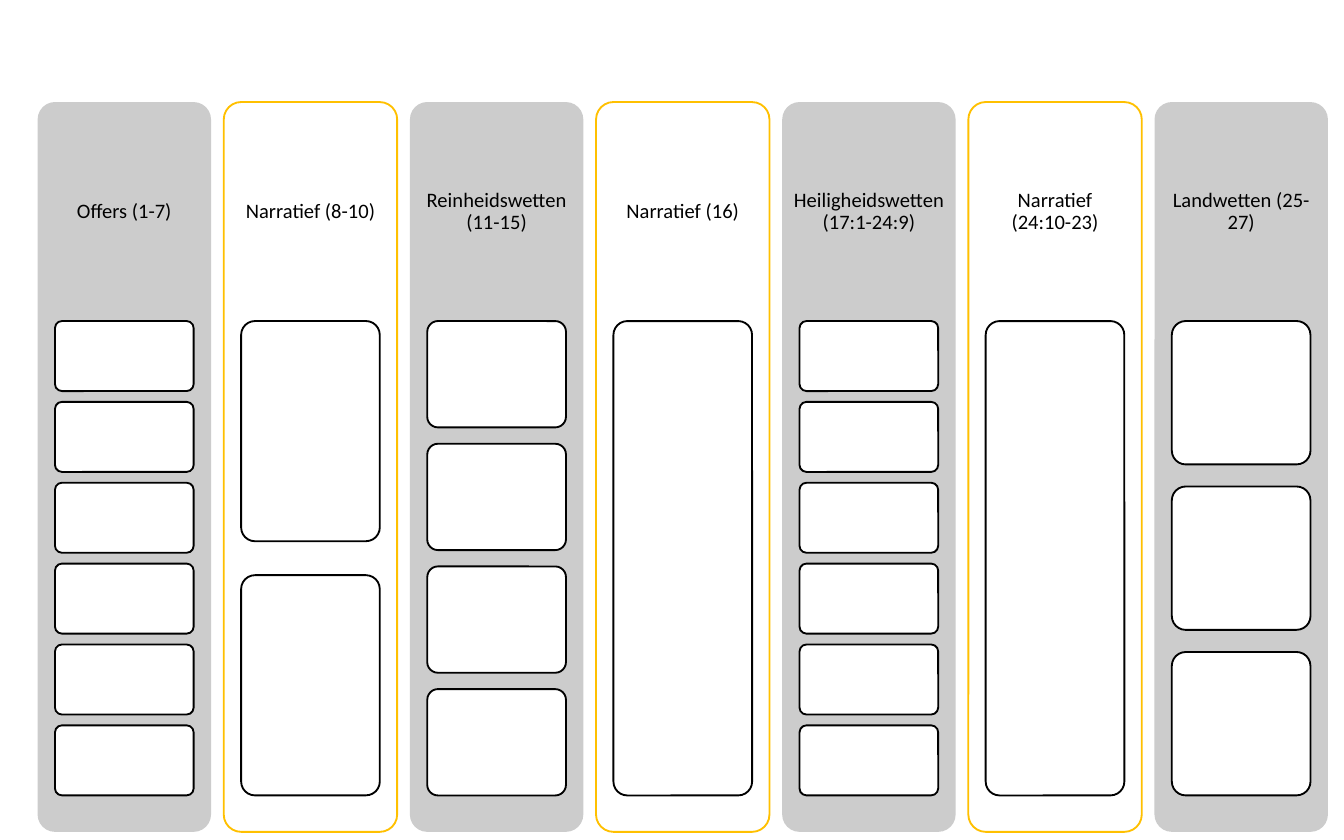
from pptx import Presentation
from pptx.dml.color import RGBColor
from pptx.enum.shapes import MSO_SHAPE
from pptx.enum.text import MSO_ANCHOR, PP_ALIGN
from pptx.util import Inches, Pt

ROUNDED = MSO_SHAPE.ROUNDED_RECTANGLE
MIDDLE = MSO_ANCHOR.MIDDLE
CENTER = PP_ALIGN.CENTER

SECTIONS = [
    (["Offers (1-7)"], 6),
    (["Narratief (8-10)"], 2),
    (["Reinheidswetten (11-15)"], 4),
    (["Narratief (16)"], 1),
    (["Heiligheidswetten (17:1-24:9)"], 6),
    (["Narratief", "(24:10-23)"], 1),
    (["Landwetten (25-27)"], 3),
]
BLACK, WHITE, GREY, GOLD = "000000", "FFFFFF", "CCCCCC", "FFC000"
STYLES = [(GREY, None), (WHITE, GOLD)]

SLIDE_W, SLIDE_H = 10, 6.25
LEFT, TOP, PITCH = 0.28, 0.76, 1.385
COL_W, COL_H = 1.29, 5.43
HEAD_H = COL_H * 0.3
STACK_H = COL_H * 0.65
BOX_W = COL_W * 0.8
GAP_SHARE = 0.154


def color(value):
    return RGBColor.from_string(value)


def add_card(s, x, y, w, h, fill, line):
    sp = s.shapes.add_shape(ROUNDED, Inches(x), Inches(y), Inches(w), Inches(h))
    sp.shadow.inherit = False
    sp.adjustments[0] = 0.1
    sp.fill.solid()
    sp.fill.fore_color.rgb = color(fill)
    if line:
        sp.line.color.rgb = color(line)
        sp.line.width = Pt(1)
    else:
        sp.line.fill.background()


def add_heading(s, x, lines):
    sp = s.shapes.add_textbox(Inches(x), Inches(TOP), Inches(COL_W), Inches(HEAD_H))
    tf = sp.text_frame
    tf.word_wrap = True
    tf.vertical_anchor = MIDDLE
    tf.margin_left = tf.margin_right = tf.margin_top = tf.margin_bottom = Inches(0.05)
    p = tf.paragraphs[0]
    p.alignment = CENTER
    p.line_spacing = 0.9
    for i, line in enumerate(lines):
        if i:
            p.add_line_break()
        r = p.add_run()
        r.text = line
        r.font.name = "Calibri"
        r.font.size = Pt(11)
        r.font.color.rgb = color(BLACK)


def add_stack(s, x, count):
    box_h = STACK_H / (count + (count - 1) * GAP_SHARE)
    for row in range(count):
        y = TOP + HEAD_H + row * box_h * (1 + GAP_SHARE)
        add_card(s, x + (COL_W - BOX_W) / 2, y, BOX_W, box_h, WHITE, BLACK)


prs = Presentation()
prs.slide_width, prs.slide_height = Inches(SLIDE_W), Inches(SLIDE_H)
s = prs.slides.add_slide(prs.slide_layouts[6])

for col, (lines, count) in enumerate(SECTIONS):
    x = LEFT + col * PITCH
    add_card(s, x, TOP, COL_W, COL_H, *STYLES[col % 2])
    add_heading(s, x, lines)
    add_stack(s, x, count)

prs.save("out.pptx")
